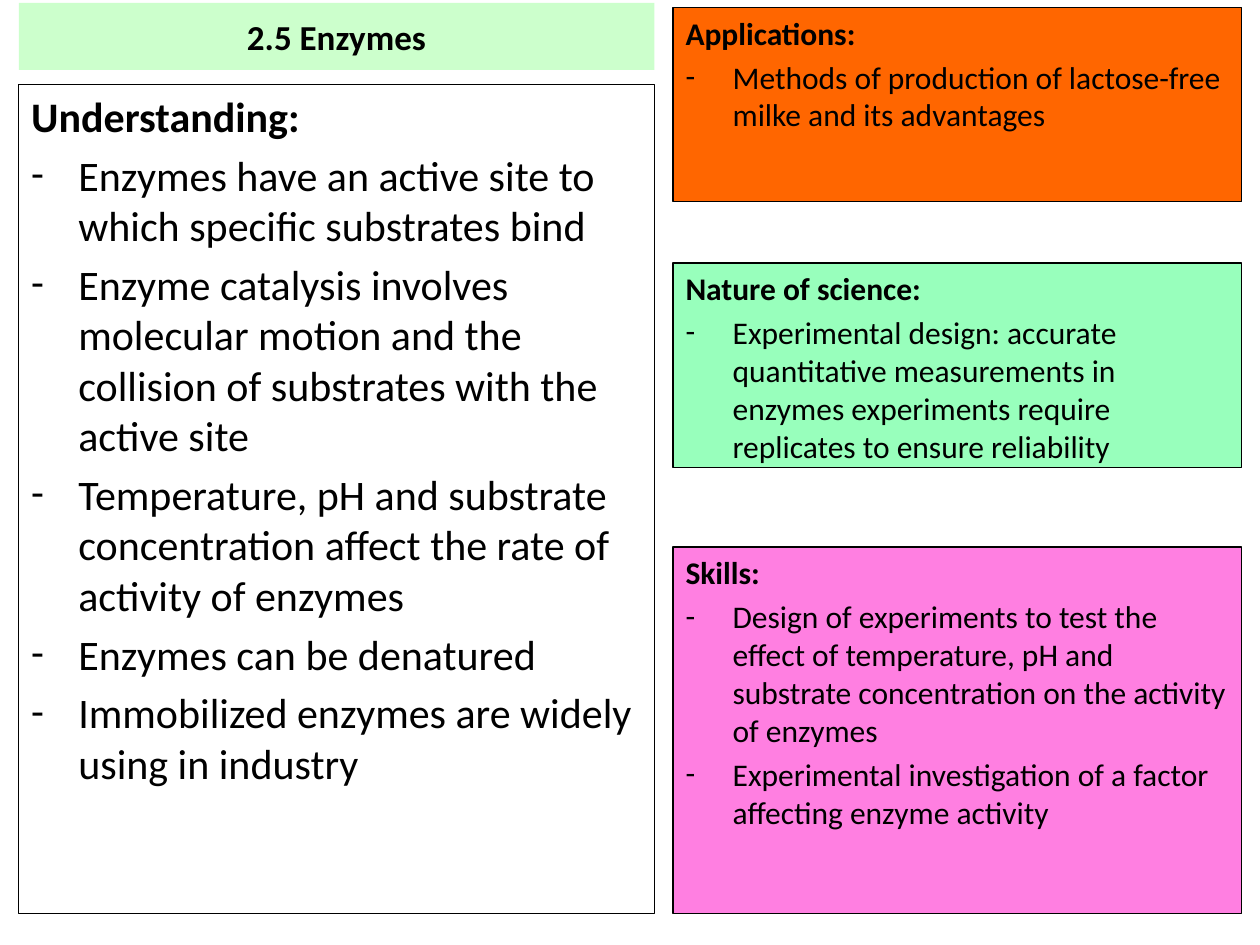
"""Build the 2.5 Enzymes syllabus overview slide."""
from dataclasses import dataclass

from lxml import etree
from pptx import Presentation
from pptx import util as u
from pptx.dml.color import RGBColor
from pptx.enum import shapes, text
from pptx.oxml.ns import qn

FONT = "Calibri"
BLACK = "000000"
LEFT_X, LEFT_WIDTH = 0.38, 12.81
RIGHT_X, RIGHT_WIDTH = 13.57, 11.46
INDENT = u.Cm(0.95)


@dataclass
class Panel:
    heading: str
    points: list[str]
    left: float
    top: float
    width: float
    height: float
    fill: str | None = None
    size: int = 18


PANELS = [
    Panel("Understanding:", [
        "Enzymes have an active site to which specific substrates bind",
        "Enzyme catalysis involves molecular motion and the collision of substrates with the active site",
        "Temperature, pH and substrate concentration affect the rate of activity of enzymes",
        "Enzymes can be denatured",
        "Immobilized enzymes are widely using in industry",
    ], LEFT_X, 1.7, LEFT_WIDTH, 16.71, size=24),
    Panel("Applications:", [
        "Methods of production of lactose-free milke and its advantages",
    ], RIGHT_X, 0.15, RIGHT_WIDTH, 3.92, "FF6600"),
    Panel("Skills:", [
        "Design of experiments to test the effect of temperature, pH and substrate concentration "
        "on the activity of enzymes",
        "Experimental investigation of a factor affecting enzyme activity",
    ], RIGHT_X, 11.03, RIGHT_WIDTH, 7.38, "FF7FE1"),
    Panel("Nature of science:", [
        "Experimental design: accurate quantitative measurements in enzymes experiments require "
        "replicates to ensure reliability",
    ], RIGHT_X, 5.3, RIGHT_WIDTH, 4.13, "98FFBC"),
]


def color(hex_code: str) -> RGBColor:
    return RGBColor.from_string(hex_code)


def set_fill(shape, hex_code: str | None) -> None:
    if hex_code is None:
        shape.fill.background()
    else:
        shape.fill.solid()
        shape.fill.fore_color.rgb = color(hex_code)


def format_runs(paragraph, size: int, bold: bool) -> None:
    for run in paragraph.runs:
        run.font.name = FONT
        run.font.size = u.Pt(size)
        run.font.bold = bold
        run.font.color.rgb = color(BLACK)


def add_dash(paragraph) -> None:
    properties = paragraph._p.get_or_add_pPr()
    properties.set("marL", str(INDENT))
    properties.set("indent", str(-INDENT))
    etree.SubElement(properties, qn("a:buFont")).set("typeface", FONT)
    etree.SubElement(properties, qn("a:buChar")).set("char", "-")


def draw_title(slide, wording: str) -> None:
    title = slide.shapes.title
    title.left, title.top = u.Cm(LEFT_X), u.Cm(0.06)
    title.width, title.height = u.Cm(LEFT_WIDTH), u.Cm(1.35)
    set_fill(title, "CCFFCC")
    frame = title.text_frame
    frame.text = wording
    frame.auto_size = text.MSO_AUTO_SIZE.NONE
    frame.vertical_anchor = text.MSO_ANCHOR.MIDDLE
    frame.paragraphs[0].alignment = text.PP_ALIGN.CENTER
    format_runs(frame.paragraphs[0], 20, True)


def draw_panel(slide, panel: Panel) -> None:
    shape = slide.shapes.add_shape(
        shapes.MSO_SHAPE.RECTANGLE, u.Cm(panel.left), u.Cm(panel.top),
        u.Cm(panel.width), u.Cm(panel.height))
    shape.shadow.inherit = False
    set_fill(shape, panel.fill)
    shape.line.color.rgb = color(BLACK)
    shape.line.width = u.Pt(0.75)
    frame = shape.text_frame
    frame.word_wrap = True
    frame.vertical_anchor = text.MSO_ANCHOR.TOP
    frame.text = "\n".join([panel.heading, *panel.points])
    for index, paragraph in enumerate(frame.paragraphs):
        paragraph.alignment = text.PP_ALIGN.LEFT
        paragraph.space_before = u.Pt(panel.size * 0.2)
        format_runs(paragraph, panel.size, index == 0)
        if index:
            add_dash(paragraph)


def main() -> None:
    presentation = Presentation()
    presentation.slide_width, presentation.slide_height = u.Cm(25.4), u.Cm(19.05)
    slide = presentation.slides.add_slide(presentation.slide_layouts.get_by_name("Title Only"))
    draw_title(slide, "2.5 Enzymes")
    for panel in PANELS:
        draw_panel(slide, panel)
    presentation.save("out.pptx")


if __name__ == "__main__":
    main()
